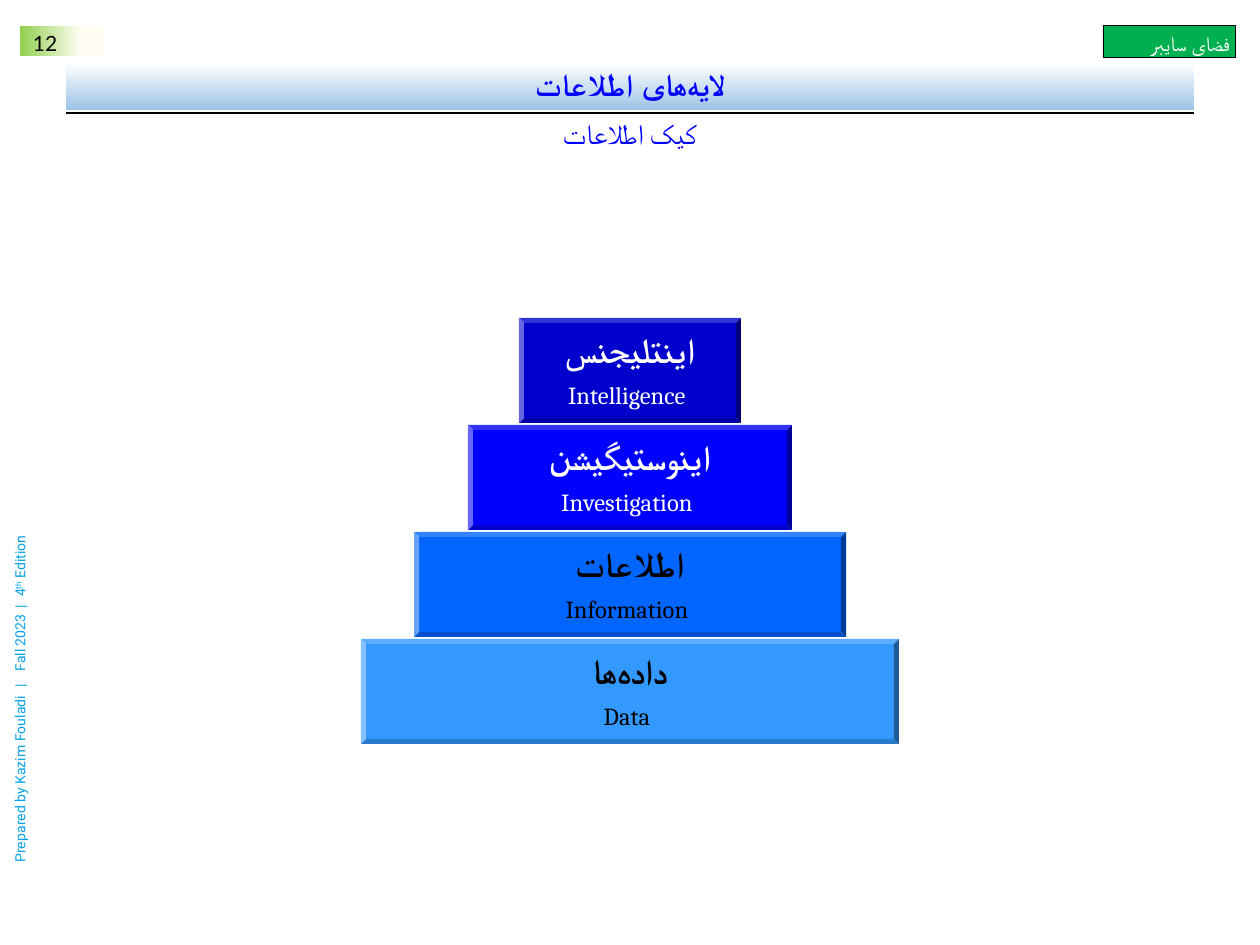
import pptx
import pptx.util
import pptx.dml.color
import pptx.enum.shapes
import pptx.enum.text
import pptx.oxml.ns
import lxml.etree

SHAPE = pptx.enum.shapes.MSO_SHAPE
ALIGN = pptx.enum.text.PP_ALIGN
ANCHOR = pptx.enum.text.MSO_ANCHOR
Pt = pptx.util.Pt
JOINT = chr(8204)


def px(count):
    return pptx.util.Emu(round(count * 914400 / 126))


def color(code):
    return pptx.dml.color.RGBColor.from_string(code)


def block(slide, kind, box, fill):
    shape = slide.shapes.add_shape(kind, *map(px, box))
    shape.shadow.inherit = False
    shape.line.fill.background()
    if isinstance(fill, str):
        shape.fill.solid()
        shape.fill.fore_color.rgb = color(fill)
    else:
        angle, stops = fill
        shape.fill.gradient()
        shape.fill.gradient_angle = angle
        for stop, (place, code) in zip(shape.fill.gradient_stops, stops):
            stop.position = place
            stop.color.rgb = color(code)
    return shape


def label(slide, box):
    return slide.shapes.add_textbox(*map(px, box))


def frame(shape, pads, anchor=ANCHOR.TOP):
    text = shape.text_frame
    text.word_wrap = True
    text.vertical_anchor = anchor
    text.margin_left, text.margin_top, text.margin_right, text.margin_bottom = map(px, pads)
    return text


def align(para, side, rtl=False, lead=None):
    para.alignment = side
    if rtl:
        para._p.get_or_add_pPr().set("rtl", "1")
    if lead:
        para.line_spacing = lead


def write(para, words, size, face, code, bold=False, **marks):
    run = para.add_run()
    run.text = words
    run.font.size = Pt(size)
    run.font.name = face
    run.font.bold = bold
    run.font.color.rgb = color(code)
    for key, value in marks.items():
        run._r.get_or_add_rPr().set(key, str(value))


def number(slide, box):
    shape = block(slide, SHAPE.RECTANGLE, box, (180, [(0.27, "FFFCF2"), (0.99, "92D050")]))
    para = frame(shape, (13, 5, 13, 0)).paragraphs[0]
    align(para, ALIGN.LEFT)
    write(para, "12", 12, "Lato", "000000")


def topic(slide, box):
    shape = block(slide, SHAPE.RECTANGLE, box, "00B050")
    shape.line.color.rgb = color("000000")
    shape.line.width = Pt(0.5)
    para = frame(shape, (5, 10, 5, 6), ANCHOR.MIDDLE).paragraphs[0]
    align(para, ALIGN.RIGHT)
    write(para, "فضای سایبر", 12, "Calibri", "FFFFFF")


def credit(slide, box):
    shape = label(slide, box)
    shape.rotation = 270
    para = frame(shape, (13, 6, 13, 6)).paragraphs[0]
    style = 8, "Roboto", "04A1E3"
    write(para, "Prepared by Kazim Fouladi", *style)
    write(para, " | ", *style, spc=267)
    write(para, "Fall 2023", *style)
    write(para, " | ", *style, spc=133)
    write(para, "4", *style)
    write(para, "th", *style, baseline=30000)
    write(para, " Edition", *style)


def header(slide, box):
    left, top, width, height = box
    band = block(slide, SHAPE.RECTANGLE, (left, top, width, 47),
                 (270, [(0, "FFFFFF"), (1, "9DC3E6")]))
    para = frame(band, (13, 6, 13, 6), ANCHOR.MIDDLE).paragraphs[0]
    align(para, ALIGN.CENTER, True, 0.9)
    write(para, f"لایه{JOINT}های اطلاعات", 18, "Calibri", "0000FF", True)

    rule = slide.shapes.add_connector(
        pptx.enum.shapes.MSO_CONNECTOR.STRAIGHT,
        px(left), px(top + 50), px(left + width), px(top + 50))
    rule.line.color.rgb = color("000000")
    rule.line.width = Pt(1.5)
    lxml.etree.SubElement(rule._element.spPr, pptx.oxml.ns.qn("a:effectLst"))

    note = label(slide, (left, top + 54, width, height - 54))
    para = frame(note, (13, 3, 13, 6)).paragraphs[0]
    align(para, ALIGN.CENTER, True, 0.9)
    write(para, "کیک اطلاعات", 16, "Calibri", "0000FF")


def cake(slide, box, layers):
    left, top, width, height = box
    gap = 2
    tall = (height + gap) / len(layers) - gap
    for row, (wide, fill, ink, name, term) in enumerate(layers):
        place = left + (width - wide) / 2, top + row * (tall + gap), wide, tall
        shape = block(slide, SHAPE.BEVEL, place, fill)
        shape.adjustments[0] = 0.048
        text = frame(shape, (5, 10, 5, 5), ANCHOR.MIDDLE)
        para = text.paragraphs[0]
        align(para, ALIGN.CENTER, True, 0.8)
        write(para, name, 20, "Calibri", ink, True)
        para = text.add_paragraph()
        align(para, ALIGN.CENTER, True, 0.8)
        para.space_before = Pt(9)
        write(para, " " + term, 14, "Cambria", ink)


def main():
    deck = pptx.Presentation()
    deck.slide_width, deck.slide_height = px(1260), px(945)
    slide = deck.slides.add_slide(deck.slide_layouts[6])
    number(slide, (20, 26, 83, 30))
    topic(slide, (1103, 25, 132, 32))
    credit(slide, (-166, 674, 373, 30))
    header(slide, (66, 63, 1128, 91))
    cake(slide, (361, 318, 538, 426), [
        (222, "0000CC", "FFFFFF", "اینتلیجنس", "Intelligence"),
        (324, "0000FF", "FFFFFF", "اینوستیگیشن", "Investigation"),
        (432, "0066FF", "000000", "اطلاعات", "Information"),
        (538, "3399FF", "000000", f"داده{JOINT}ها", "Data"),
    ])
    deck.save("out.pptx")


if __name__ == "__main__":
    main()
